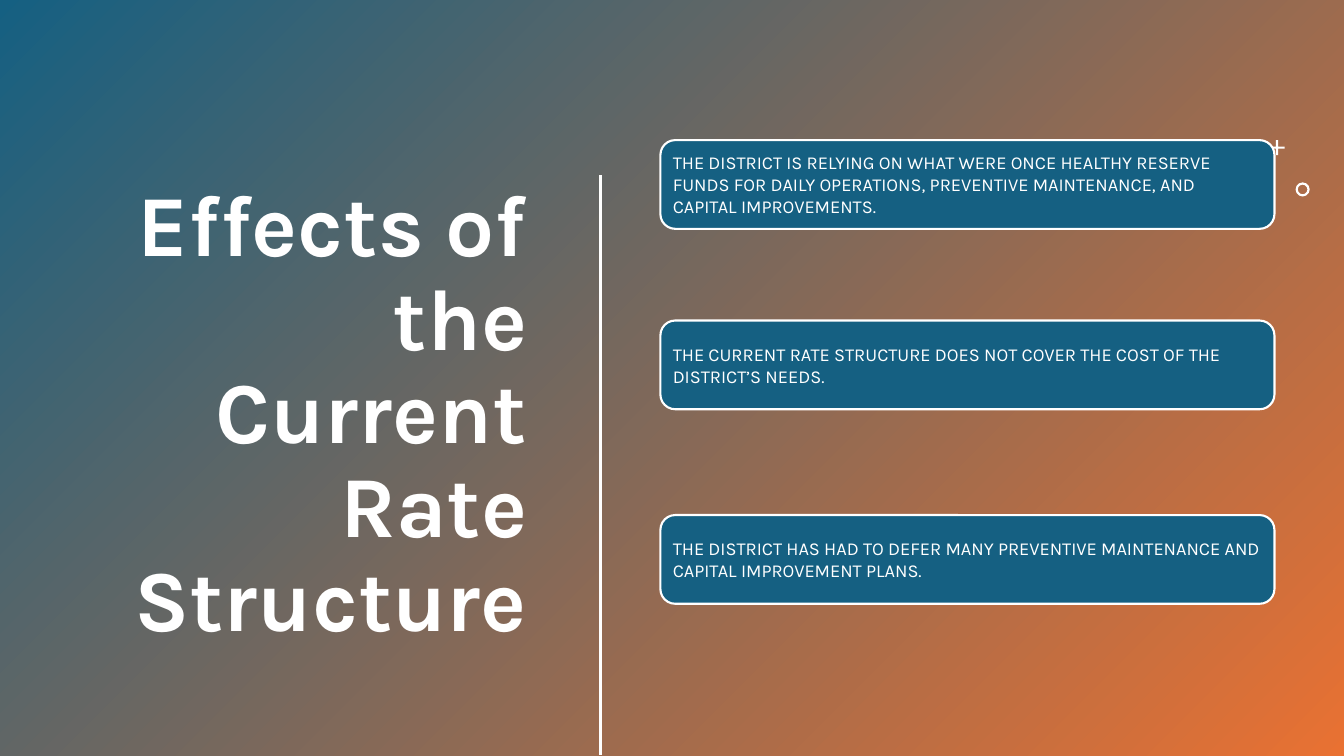
from pptx import Presentation
from pptx.dml.color import RGBColor
from pptx.enum import shapes, text
from pptx.util import Inches, Pt

COLORS = {"blue": "156082", "orange": "E97132", "white": "FFFFFF"}
FONT = "Karla"
CARDS = [
    (1.39, "THE DISTRICT IS RELYING ON WHAT WERE ONCE HEALTHY RESERVE FUNDS FOR DAILY "
           "OPERATIONS, PREVENTIVE MAINTENANCE, AND CAPITAL IMPROVEMENTS."),
    (3.18, "THE CURRENT RATE STRUCTURE DOES NOT COVER THE COST OF THE DISTRICT’S NEEDS."),
    (5.11, "THE DISTRICT HAS HAD TO DEFER MANY PREVENTIVE MAINTENANCE AND CAPITAL "
           "IMPROVEMENT PLANS."),
]


def color(name):
    return RGBColor.from_string(COLORS[name])


def add_shape(s, kind, x, y, w, h, fill=None):
    sp = s.shapes.add_shape(kind, Inches(x), Inches(y), Inches(w), Inches(h))
    sp.shadow.inherit = False
    sp.line.fill.background()
    if fill:
        sp.fill.solid()
        sp.fill.fore_color.rgb = color(fill)
    return sp


def style_paragraph(p, size, align, bold=False):
    p.alignment = align
    p.font.name = FONT
    p.font.size = Pt(size)
    p.font.bold = bold
    p.font.color.rgb = color("white")


def add_backdrop(s, w, h):
    sp = add_shape(s, shapes.MSO_SHAPE.RECTANGLE, 0, 0, w, h)
    sp.fill.gradient()
    sp.fill.gradient_angle = 315
    for stop, position, name in zip(sp.fill.gradient_stops, (0, 1), ("blue", "orange")):
        stop.position = position
        stop.color.rgb = color(name)
    s.shapes.title.element.addprevious(sp.element)


def add_title(s, x, y, w, h):
    sp = s.shapes.title
    sp.left, sp.top, sp.width, sp.height = (Inches(v) for v in (x, y, w, h))
    tf = sp.text_frame
    tf.text = "Effects of the Current Rate Structure"
    tf.word_wrap = True
    tf.auto_size = text.MSO_AUTO_SIZE.NONE
    tf.vertical_anchor = text.MSO_ANCHOR.TOP
    p = tf.paragraphs[0]
    p.line_spacing = 0.9
    p.space_after = Pt(6)
    style_paragraph(p, 62, text.PP_ALIGN.RIGHT, bold=True)


def add_divider(s, x, top, bottom):
    line = s.shapes.add_connector(
        shapes.MSO_CONNECTOR.STRAIGHT, Inches(x), Inches(top), Inches(x), Inches(bottom))
    line.line.color.rgb = color("white")
    line.line.width = Pt(2)
    pr = line.element.spPr
    pr.append(pr.makeelement(
        "{http://schemas.openxmlformats.org/drawingml/2006/main}effectLst", {}))


def add_ornaments(s, x, y):
    plus = add_shape(s, shapes.MSO_SHAPE.CROSS, x, y, 0.15, 0.15, "white")
    plus.adjustments[0] = 0.43
    ring = add_shape(s, shapes.MSO_SHAPE.DONUT, x + 0.26, y + 0.42, 0.14, 0.14, "white")
    ring.adjustments[0] = 0.16


def add_card(s, x, y, w, h, wording):
    sp = add_shape(s, shapes.MSO_SHAPE.ROUNDED_RECTANGLE, x, y, w, h, "blue")
    sp.line.color.rgb = color("white")
    sp.line.width = Pt(1.5)
    tf = sp.text_frame
    tf.text = wording
    tf.word_wrap = True
    tf.vertical_anchor = text.MSO_ANCHOR.MIDDLE
    tf.margin_left = tf.margin_right = Inches(0.08)
    tf.margin_top = tf.margin_bottom = Inches(0.08)
    style_paragraph(tf.paragraphs[0], 13, text.PP_ALIGN.LEFT)


def main():
    prs = Presentation()
    prs.slide_width, prs.slide_height = Inches(13.33), Inches(7.5)
    s = prs.slides.add_slide(prs.slide_layouts[5])
    add_backdrop(s, 13.33, 7.5)
    add_title(s, 0.5, 1.75, 4.83, 3.97)
    add_divider(s, 5.96, 1.74, 7.49)
    add_ornaments(s, 12.59, 1.39)
    for top, wording in CARDS:
        add_card(s, 6.55, top, 6.09, 0.88, wording)
    prs.save("out.pptx")


if __name__ == "__main__":
    main()
